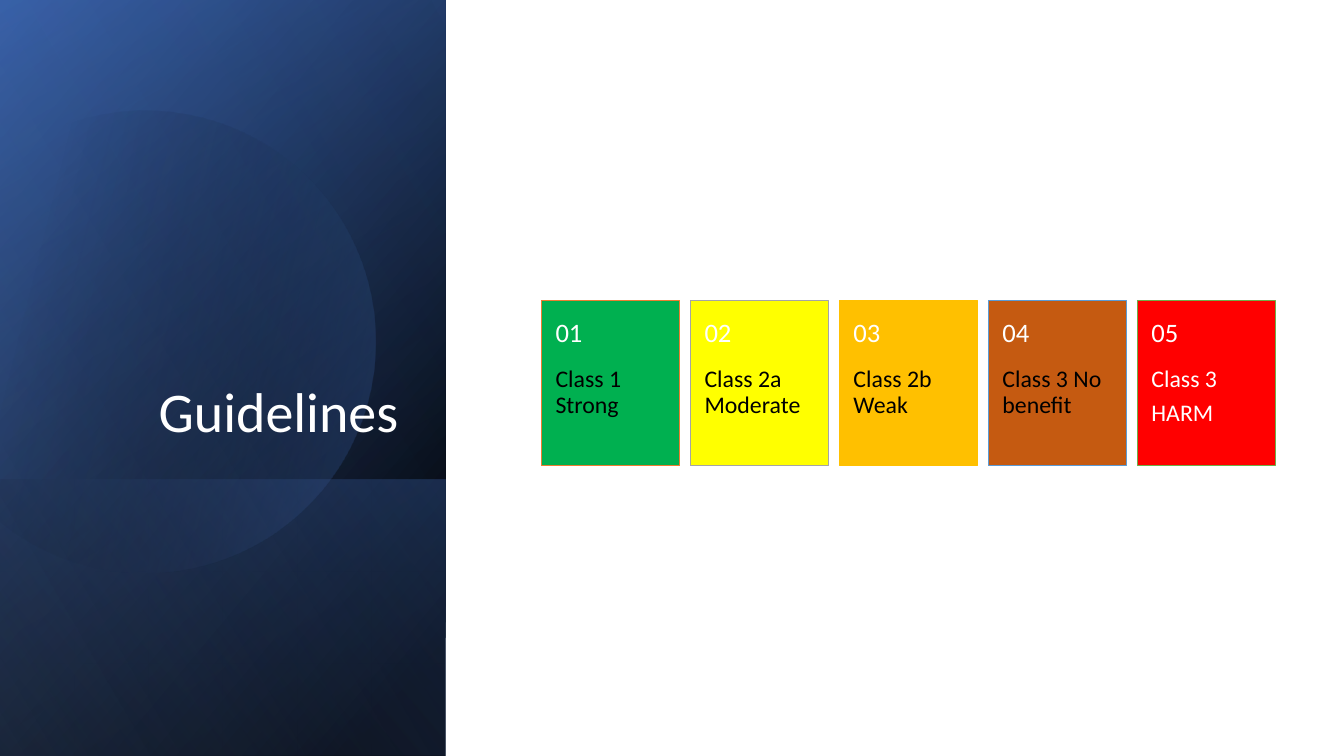
from math import acos, cos, degrees, radians, sin

from lxml import etree
from pptx import Presentation
from pptx.dml.color import RGBColor
from pptx.enum.shapes import MSO_SHAPE
from pptx.enum.text import MSO_ANCHOR, MSO_AUTO_SIZE, PP_ALIGN
from pptx.oxml.ns import qn
from pptx.util import Inches, Pt

RECTANGLE = MSO_SHAPE.RECTANGLE
TOP, MIDDLE, BOTTOM = MSO_ANCHOR.TOP, MSO_ANCHOR.MIDDLE, MSO_ANCHOR.BOTTOM
LEFT, RIGHT = PP_ALIGN.LEFT, PP_ALIGN.RIGHT
NO_AUTOFIT = MSO_AUTO_SIZE.NONE

FONT = "Calibri"
BLACK = RGBColor(0x00, 0x00, 0x00)
WHITE = RGBColor(0xFF, 0xFF, 0xFF)
NAVY = RGBColor(0x2F, 0x55, 0x97)
BLUE = RGBColor(0x44, 0x72, 0xC4)
PALE_BLUE = RGBColor(0x8F, 0xAA, 0xDC)
SKY = RGBColor(0x5B, 0x9B, 0xD5)
GREEN = RGBColor(0x00, 0xB0, 0x50)
LEAF = RGBColor(0x70, 0xAD, 0x47)
YELLOW = RGBColor(0xFF, 0xFF, 0x00)
GREY = RGBColor(0xA5, 0xA5, 0xA5)
AMBER = RGBColor(0xFF, 0xC0, 0x00)
ORANGE = RGBColor(0xED, 0x7D, 0x31)
BROWN = RGBColor(0xC5, 0x5A, 0x11)
RED = RGBColor(0xFF, 0x00, 0x00)

# Number, lines of text, fill, outline, text colour
CLASSES = [
    ("01", ["Class 1 Strong"], GREEN, ORANGE, BLACK),
    ("02", ["Class 2a Moderate"], YELLOW, GREY, BLACK),
    ("03", ["Class 2b Weak"], AMBER, AMBER, BLACK),
    ("04", ["Class 3 No benefit"], BROWN, SKY, BLACK),
    ("05", ["Class 3", "HARM"], RED, LEAF, WHITE),
]
CARD_LEFT, CARD_TOP, CARD_WIDTH, CARD_HEIGHT = 5.37, 2.98, 1.37, 1.64
CARD_PITCH = (11.28 - CARD_LEFT) / (len(CLASSES) - 1)
NUMBER_HEIGHT = 0.66


def set_gradient(shape, angle, stops):
    """Fill with stops of (position %, colour, opacity %)."""
    shape.shadow.inherit = False
    shape.line.fill.background()
    shape.fill.background()
    gradient = etree.Element(qn("a:gradFill"), rotWithShape="1")
    stop_list = etree.SubElement(gradient, qn("a:gsLst"))
    for position, color, opacity in stops:
        stop = etree.SubElement(stop_list, qn("a:gs"), pos=str(position * 1000))
        paint = etree.SubElement(stop, qn("a:srgbClr"), val=str(color))
        etree.SubElement(paint, qn("a:alpha"), val=str(opacity * 1000))
    etree.SubElement(gradient, qn("a:lin"), ang=str(angle * 60000), scaled="0")
    properties = shape.element.spPr
    properties.replace(properties.find(qn("a:noFill")), gradient)


def add_panel(slide, left, top, width, height, angle, stops):
    """Add a mirrored gradient rectangle turned by a quarter."""
    panel = slide.shapes.add_shape(
        RECTANGLE, Inches(left), Inches(top), Inches(width), Inches(height))
    panel.rotation = 90
    panel.element.spPr.xfrm.set("flipH", "1")
    set_gradient(panel, angle, stops)


def add_cut_disc(slide):
    """Add the disc whose left side is cut off by an upright chord."""
    center_x, center_y, radius, chord_distance = 1.43, 3.35, 2.29, 1.59
    tilt = 16.1
    half_arc = degrees(acos(-chord_distance / radius))
    steps = 120
    points = []
    for step in range(steps + 1):
        angle = radians(tilt - half_arc + 2 * half_arc * step / steps)
        points.append((Inches(center_x + radius * cos(angle)),
                       Inches(center_y + radius * sin(angle))))
    builder = slide.shapes.build_freeform(*points[0])
    builder.add_line_segments(points[1:], close=True)
    disc = builder.convert_to_shape()
    disc.rotation = 360 - tilt
    set_gradient(disc, 30, [(29, BLACK, 0), (100, BLUE, 43)])


def write_text(frame, lines, size, color, anchor, align=LEFT, after=0):
    frame.word_wrap = True
    frame.auto_size = NO_AUTOFIT
    frame.vertical_anchor = anchor
    for index, line in enumerate(lines):
        para = frame.paragraphs[0] if index == 0 else frame.add_paragraph()
        para.text = line
        para.alignment = align
        para.line_spacing = 0.9
        para.space_before = Pt(0)
        para.space_after = Pt(after)
        para.font.name = FONT
        para.font.size = Pt(size)
        para.font.color.rgb = color


def add_label(shapes, left, top, height, insets, lines, size, color, anchor):
    box = shapes.add_textbox(
        Inches(left), Inches(top), Inches(CARD_WIDTH), Inches(height))
    frame = box.text_frame
    frame.margin_left = frame.margin_right = Inches(0.14)
    frame.margin_top, frame.margin_bottom = map(Inches, insets)
    write_text(frame, lines, size, color, anchor, after=0.35 * size)


def add_card(shapes, left, number, lines, fill, outline, color):
    card = shapes.add_shape(RECTANGLE, Inches(left), Inches(CARD_TOP),
                            Inches(CARD_WIDTH), Inches(CARD_HEIGHT))
    card.shadow.inherit = False
    card.fill.solid()
    card.fill.fore_color.rgb = fill
    card.line.color.rgb = outline
    card.line.width = Pt(0.5)
    add_label(shapes, left, CARD_TOP + NUMBER_HEIGHT, CARD_HEIGHT - NUMBER_HEIGHT,
              (0, 0.36), lines, 17, color, TOP)
    add_label(shapes, left, CARD_TOP, NUMBER_HEIGHT,
              (0.18, 0.18), [number], 19, WHITE, MIDDLE)


def place_title(slide, text):
    title = slide.shapes.title
    title.left, title.top = Inches(0.64), Inches(1.84)
    title.width, title.height = Inches(3.41), Inches(2.62)
    write_text(title.text_frame, [text], 40, WHITE, BOTTOM, RIGHT)
    # Bring the title in front of the side panel
    slide.shapes.element.append(title.element)


def main():
    deck = Presentation()
    deck.slide_width, deck.slide_height = Inches(13.33), Inches(7.5)
    page = deck.slides.add_slide(deck.slide_layouts[5])

    # Side panel
    full_panel = (-1.54, 1.54, 7.5, 4.42)
    add_panel(page, *full_panel, 50, [(8, BLACK, 100), (100, NAVY, 100)])
    add_panel(page, *full_panel, 30, [(0, BLACK, 0), (99, BLUE, 46)])
    add_panel(page, 0.84, 3.92, 2.74, 4.42, 130, [(2, BLUE, 29), (100, BLACK, 30)])
    add_cut_disc(page)
    add_panel(page, *full_panel, 120, [(0, BLACK, 0), (99, PALE_BLUE, 11)])
    place_title(page, "Guidelines")

    # Row of recommendation classes
    cards = page.shapes.add_group_shape()
    for index, details in enumerate(CLASSES):
        add_card(cards.shapes, CARD_LEFT + index * CARD_PITCH, *details)

    deck.save("out.pptx")


if __name__ == "__main__":
    main()
